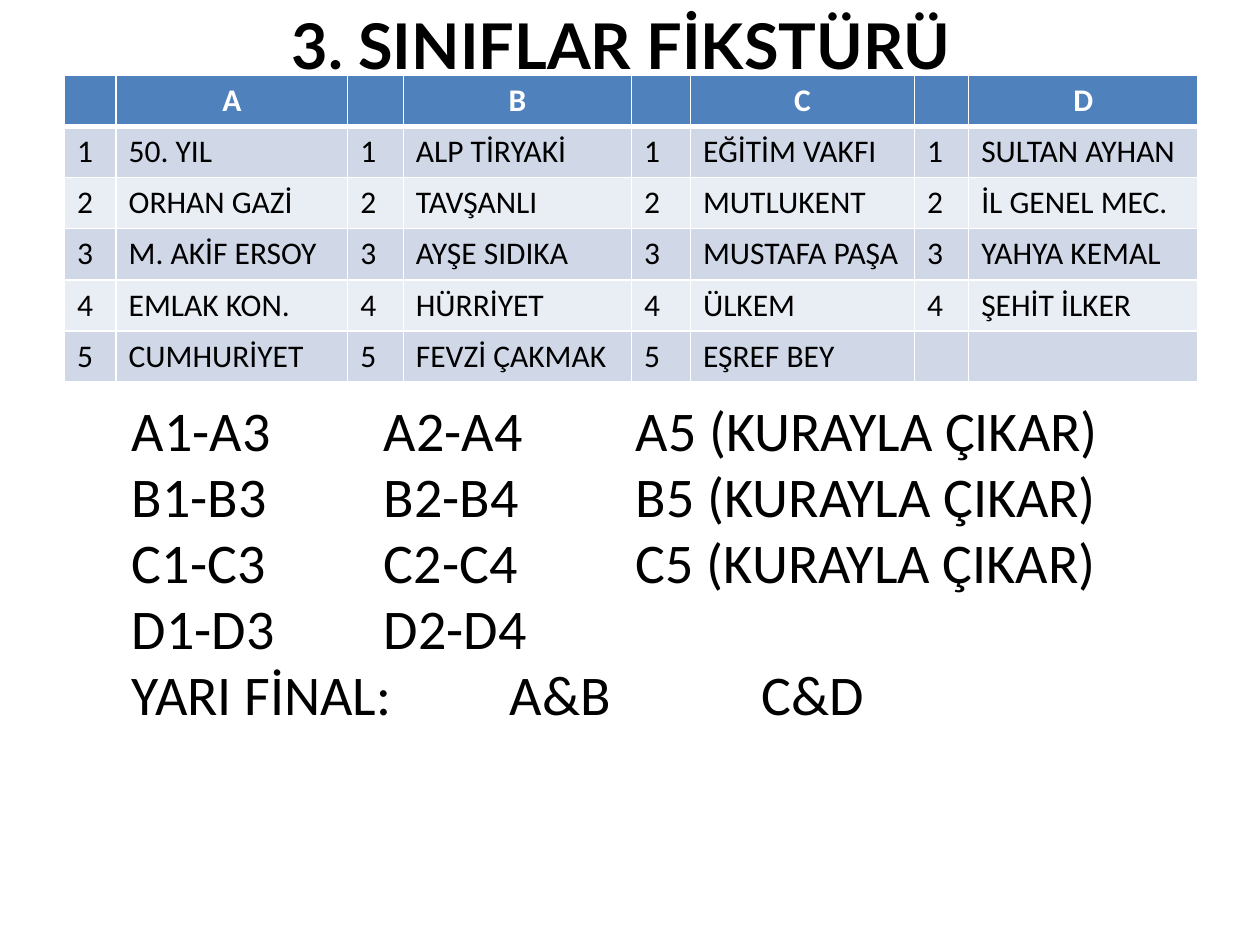
from pptx import Presentation
from pptx.dml.color import RGBColor
from pptx.enum.text import MSO_ANCHOR, PP_ALIGN
from pptx.oxml.ns import qn
from pptx.util import Cm, Pt
from lxml import etree

MID, TOP = MSO_ANCHOR.MIDDLE, MSO_ANCHOR.TOP
LEFT, CENTER = PP_ALIGN.LEFT, PP_ALIGN.CENTER

# Content
TITLE = "3. SINIFLAR FİKSTÜRÜ"
GROUPS = {
    "A": ["50. YIL", "ORHAN GAZİ", "M. AKİF ERSOY", "EMLAK KON.", "CUMHURİYET"],
    "B": ["ALP TİRYAKİ", "TAVŞANLI", "AYŞE SIDIKA", "HÜRRİYET", "FEVZİ ÇAKMAK"],
    "C": ["EĞİTİM VAKFI", "MUTLUKENT", "MUSTAFA PAŞA", "ÜLKEM", "EŞREF BEY"],
    "D": ["SULTAN AYHAN", "İL GENEL MEC.", "YAHYA KEMAL", "ŞEHİT İLKER"],
}
DRAW_TABS, SEMI_TABS = (5.08, 10.16), (7.62, 12.7)
MATCHES = [
    (["A1-A3", "A2-A4", "A5 (KURAYLA ÇIKAR)"], DRAW_TABS),
    (["B1-B3", "B2-B4", "B5 (KURAYLA ÇIKAR)"], DRAW_TABS),
    (["C1-C3", "C2-C4", "C5 (KURAYLA ÇIKAR)"], DRAW_TABS),
    (["D1-D3", "D2-D4"], DRAW_TABS),
    (["YARI FİNAL:", "A&B", "C&D"], SEMI_TABS),
]

# Look: lengths in cm, type in points
THEME = {
    "title": {"name": "Lato", "size": Pt(36), "bold": True, "color": "000000"},
    "head": {"name": "Calibri", "size": Pt(18), "bold": True, "color": "FFFFFF"},
    "cell": {"name": "Calibri", "size": Pt(18), "bold": False, "color": "000000"},
    "match": {"name": "Calibri", "size": Pt(32), "bold": False, "color": "000000"},
    "top": "4F81BD",
    "bands": ("D0D8E8", "E9EDF4"),
    "rule": "FFFFFF",
}
WIDTHS = (1.04, 4.67, 1.12, 4.6, 1.19, 4.52, 1.09, 4.62)
ROW = 1.03


def write(para, text, style, align=LEFT):
    para.alignment = align
    run = para.add_run()
    run.text = text
    for key, value in THEME[style].items():
        if key == "color":
            run.font.color.rgb = RGBColor.from_string(value)
        else:
            setattr(run.font, key, value)


def add_box(slide, left, top, width, height, anchor):
    frame = slide.shapes.add_textbox(Cm(left), Cm(top), Cm(width), Cm(height)).text_frame
    frame.word_wrap = True
    frame.vertical_anchor = anchor
    return frame


def set_tabs(para, stops):
    tabs = etree.SubElement(para._p.get_or_add_pPr(), qn("a:tabLst"))
    for stop in stops:
        etree.SubElement(tabs, qn("a:tab"), pos=str(Cm(stop)), algn="l")


def set_edges(cell, sizes):
    props = cell._tc.get_or_add_tcPr()
    for side, size in sizes.items():
        line = etree.SubElement(props, qn("a:ln" + side), w=str(Pt(size)))
        fill = etree.SubElement(line, qn("a:solidFill"))
        etree.SubElement(fill, qn("a:srgbClr"), val=THEME["rule"])


def group_rows():
    rows = [[text for name in GROUPS for text in ("", name)]]
    for i in range(max(map(len, GROUPS.values()))):
        row = []
        for teams in GROUPS.values():
            row += [str(i + 1), teams[i]] if i < len(teams) else ["", ""]
        rows.append(row)
    return rows


def add_groups(slide):
    rows = group_rows()
    table = slide.shapes.add_table(len(rows), len(WIDTHS), Cm(1.3), Cm(1.52),
                                   Cm(sum(WIDTHS)), Cm(ROW * len(rows))).table
    for col, width in zip(table.columns, WIDTHS):
        col.width = Cm(width)
    for r, row in enumerate(rows):
        table.rows[r].height = Cm(ROW)
        color = THEME["bands"][(r - 1) % 2] if r else THEME["top"]
        for c, text in enumerate(row):
            cell = table.cell(r, c)
            set_edges(cell, {"L": 1, "R": 1, "T": 3 if r == 1 else 1, "B": 1 if r else 3})
            cell.fill.solid()
            cell.fill.fore_color.rgb = RGBColor.from_string(color)
            if text:
                write(cell.text_frame.paragraphs[0], text,
                      "cell" if r else "head", LEFT if r else CENTER)


def add_matches(slide):
    frame = add_box(slide, 2.41, 7.92, 22.86, 8.2, TOP)
    for i, (parts, stops) in enumerate(MATCHES):
        para = frame.add_paragraph() if i else frame.paragraphs[0]
        para.line_spacing = 0.98
        write(para, "\t".join(parts), "match")
        set_tabs(para, stops)


def main():
    deck = Presentation()
    deck.slide_width, deck.slide_height = Cm(25.4), Cm(19.05)
    slide = deck.slides.add_slide(deck.slide_layouts[6])
    # Title
    frame = add_box(slide, 1.09, -0.69, 22.86, 3.18, MID)
    write(frame.paragraphs[0], TITLE, "title", CENTER)
    # Groups and fixtures
    add_groups(slide)
    add_matches(slide)
    deck.save("out.pptx")


if __name__ == "__main__":
    main()
